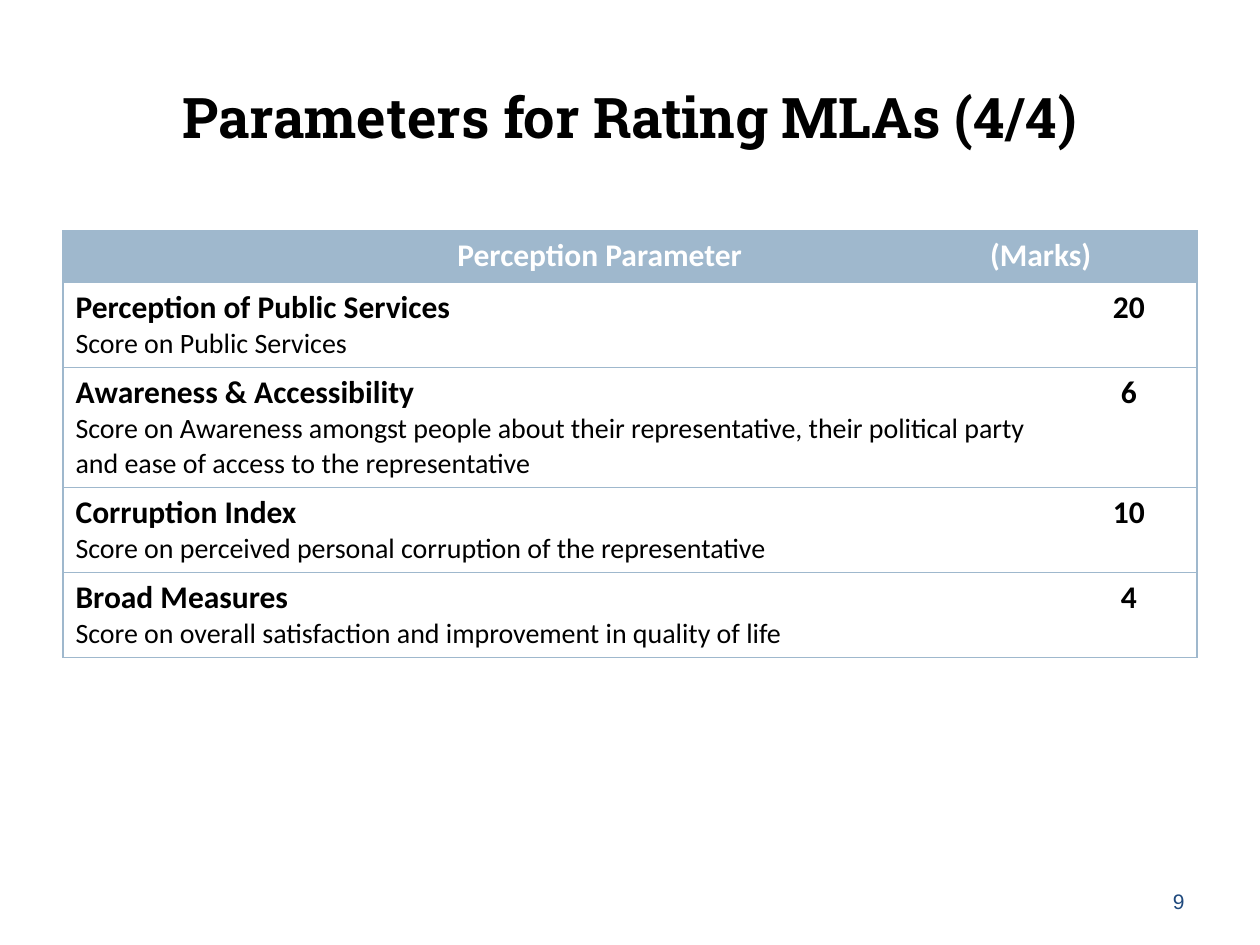
from lxml import etree
from pptx import Presentation
from pptx.dml.color import RGBColor
from pptx.enum import text as t
from pptx.oxml import ns
from pptx.util import Inches, Pt

# Content
TITLE = "Parameters for Rating MLAs (4/4)"
HEADINGS = ["Perception Parameter", "(Marks)"]
PARAMETERS = [
    ("Perception of Public Services", "Score on Public Services", "20"),
    ("Awareness & Accessibility",
     "Score on Awareness amongst people about their representative, "
     "their political party and ease of access to the representative", "6"),
    ("Corruption Index",
     "Score on perceived personal corruption of the representative", "10"),
    ("Broad Measures",
     "Score on overall satisfaction and improvement in quality of life", "4"),
]
PAGE_NUMBER = "9"

# Format
BLACK = RGBColor(0x00, 0x00, 0x00)
WHITE = RGBColor(0xFF, 0xFF, 0xFF)
NAVY = RGBColor(0x1F, 0x49, 0x7D)
STEEL = RGBColor(0x9F, 0xB8, 0xCD)
COLUMN_WIDTHS = [7.92, 1.08]
ROW_HEIGHTS = [0.41, 0.67, 0.93, 0.67, 0.67]
HEADING_CENTRES = [4.16, 7.66]
LEFT, CENTER, RIGHT = t.PP_ALIGN.LEFT, t.PP_ALIGN.CENTER, t.PP_ALIGN.RIGHT


def write(paragraph, words, size=18, font="Calibri", color=BLACK, bold=False,
          align=LEFT, centre_tabs=()):
    paragraph.text = words
    paragraph.alignment = align
    if centre_tabs:
        tabs = etree.SubElement(paragraph._p.get_or_add_pPr(), ns.qn("a:tabLst"))
        for position in centre_tabs:
            etree.SubElement(tabs, ns.qn("a:tab"), pos=str(Inches(position)), algn="ctr")
    for run in paragraph.runs:
        run.font.size = Pt(size)
        run.font.name = font
        run.font.bold = bold
        run.font.color.rgb = color


def set_borders(cell, sides):
    properties = cell._tc.get_or_add_tcPr()
    for index, side in enumerate("LRTB"):
        line = etree.Element(ns.qn(f"a:ln{side}"), w=str(Pt(0.75)))
        if side in sides:
            fill = etree.SubElement(line, ns.qn("a:solidFill"))
            etree.SubElement(fill, ns.qn("a:srgbClr"), val=str(STEEL))
        else:
            etree.SubElement(line, ns.qn("a:noFill"))
        properties.insert(index, line)


prs = Presentation()
prs.slide_width, prs.slide_height = Inches(10), Inches(7.5)
slide = prs.slides.add_slide(prs.slide_layouts[5])

# Title
title = slide.shapes.title
title.left, title.top = Inches(0.5), Inches(0.3)
title.width, title.height = Inches(9), Inches(1.25)
title.text_frame.vertical_anchor = t.MSO_ANCHOR.MIDDLE
write(title.text_frame.paragraphs[0], TITLE, size=32, font="Roboto Slab",
      bold=True, align=CENTER)

# Marks table
marks = slide.shapes.add_table(
    len(ROW_HEIGHTS), len(COLUMN_WIDTHS), Inches(0.5), Inches(1.83),
    Inches(sum(COLUMN_WIDTHS)), Inches(sum(ROW_HEIGHTS))).table
marks.horz_banding = False
for column, width in zip(marks.columns, COLUMN_WIDTHS):
    column.width = Inches(width)
for row, height in zip(marks.rows, ROW_HEIGHTS):
    row.height = Inches(height)

# Header row: one merged cell, headings centred on tab stops
header = marks.cell(0, 0)
header.merge(marks.cell(0, 1))
for cell in marks.rows[0].cells:
    set_borders(cell, "LRTB")
    cell.fill.solid()
    cell.fill.fore_color.rgb = STEEL
write(header.text_frame.paragraphs[0], "".join("\t" + h for h in HEADINGS),
      color=WHITE, bold=True, centre_tabs=HEADING_CENTRES)

# Parameter rows
for row, (name, description, score) in enumerate(PARAMETERS, start=1):
    name_cell, score_cell = marks.cell(row, 0), marks.cell(row, 1)
    for cell, sides in ((name_cell, "LTB"), (score_cell, "RTB")):
        set_borders(cell, sides)
        cell.fill.background()
    write(name_cell.text_frame.paragraphs[0], name, bold=True)
    write(name_cell.text_frame.add_paragraph(), description, size=16)
    write(score_cell.text_frame.paragraphs[0], score, bold=True, align=CENTER)

# Page number
page = slide.shapes.add_textbox(Inches(7.17), Inches(6.95), Inches(2.33), Inches(0.4))
page.text_frame.word_wrap = True
page.text_frame.vertical_anchor = t.MSO_ANCHOR.MIDDLE
write(page.text_frame.paragraphs[0], PAGE_NUMBER, size=12, font="Arial",
      color=NAVY, align=RIGHT)

prs.save("out.pptx")
